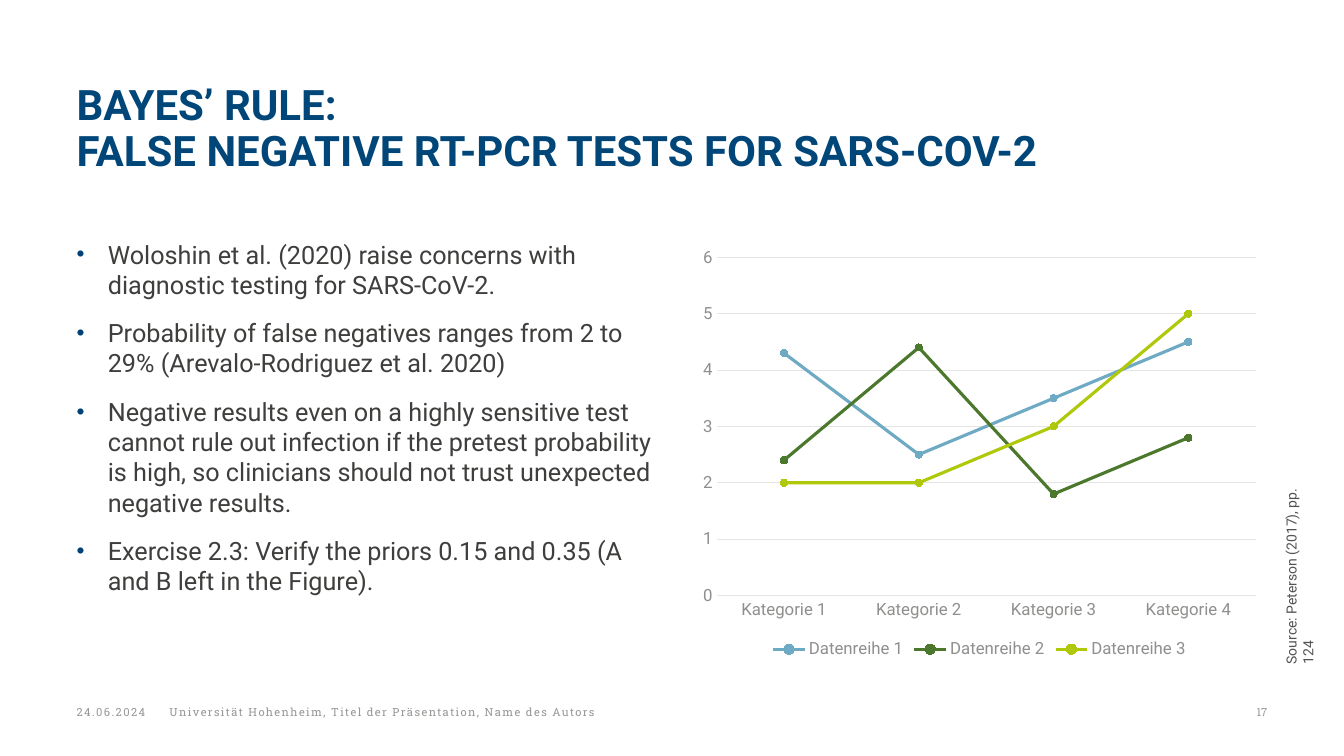
from lxml import etree
from pptx import Presentation
from pptx.chart.data import CategoryChartData
from pptx.dml.color import RGBColor
from pptx.enum import chart as ch, text
from pptx.oxml import ns
from pptx.util import Inches, Pt

SANS, SLAB = "Roboto", "Roboto Slab"
NAVY, BULLET, BODY, SOURCE = "004678", "004178", "3E3E3C", "525250"
FOOTER, AXIS, GRID = "989895", "8F8F8D", "E5E5E5"

POINTS = [
    "Woloshin et al. (2020) raise concerns with diagnostic testing for SARS-CoV-2.",
    "Probability of false negatives ranges from 2 to 29% (Arevalo-Rodriguez et al. 2020)",
    "Negative results even on a highly sensitive test cannot rule out infection if the "
    "pretest probability is high, so clinicians should not trust unexpected negative results.",
    "Exercise 2.3: Verify the priors 0.15 and 0.35 (A and B left in the Figure).",
]
CATEGORIES = [f"Kategorie {i}" for i in range(1, 5)]
SERIES = [
    ("Datenreihe 1", (4.3, 2.5, 3.5, 4.5), "6EAAC3"),
    ("Datenreihe 2", (2.4, 4.4, 1.8, 2.8), "4B782D"),
    ("Datenreihe 3", (2, 2, 3, 5), "AFC80A"),
]


def rgb(value):
    return RGBColor.from_string(value)


def format_font(font, size, color, name=SANS, bold=False):
    font.size, font.name, font.bold = Pt(size), name, bold
    font.color.rgb = rgb(color)


def format_line(line, color, width):
    line.color.rgb = rgb(color)
    line.width = Pt(width)


def place(sp, left, top, width, height):
    sp.left, sp.top = Inches(left), Inches(top)
    sp.width, sp.height = Inches(width), Inches(height)


def prepare_frame(tf, anchor=text.MSO_ANCHOR.TOP):
    tf.word_wrap = True
    tf.auto_size = text.MSO_AUTO_SIZE.NONE
    tf.vertical_anchor = anchor
    tf.margin_left = tf.margin_top = tf.margin_right = tf.margin_bottom = 0


def add_run(p, content, size, color, name=SANS, bold=False, spacing=0):
    r = p.add_run()
    r.text = content
    format_font(r.font, size, color, name, bold)
    if spacing:
        r.font._element.set("spc", str(spacing * 100))


def add_label(s, content, box, size=8, color=FOOTER, name=SLAB, spacing=0,
              anchor=text.MSO_ANCHOR.MIDDLE, align=text.PP_ALIGN.LEFT):
    sp = s.shapes.add_textbox(*map(Inches, box))
    prepare_frame(sp.text_frame, anchor)
    p = sp.text_frame.paragraphs[0]
    p.alignment = align
    add_run(p, content, size, color, name, spacing=spacing)
    return sp


def add_bullet(p):
    pPr = p._p.get_or_add_pPr()
    pPr.set("marL", str(Inches(0.31)))
    pPr.set("indent", str(-Inches(0.31)))
    color = etree.SubElement(pPr, ns.qn("a:buClr"))
    etree.SubElement(color, ns.qn("a:srgbClr"), val=BULLET)
    etree.SubElement(pPr, ns.qn("a:buSzPct"), val="90000")
    etree.SubElement(pPr, ns.qn("a:buFont"), typeface="Arial")
    etree.SubElement(pPr, ns.qn("a:buChar"), char="•")


def fill_title(sp, lines):
    place(sp, 0.76, 0.84, 11.81, 1.14)
    prepare_frame(sp.text_frame)
    p = sp.text_frame.paragraphs[0]
    p.alignment = text.PP_ALIGN.LEFT
    p.line_spacing = 0.9
    for i, line in enumerate(lines):
        if i:
            p.add_line_break()
        add_run(p, line, 30, NAVY, bold=True)


def fill_list(sp, points):
    place(sp, 0.76, 2.37, 5.71, 4.21)
    tf = sp.text_frame
    prepare_frame(tf)
    for i, point in enumerate(points):
        p = tf.add_paragraph() if i else tf.paragraphs[0]
        add_bullet(p)
        p.space_before = Pt(8 if i else 0)
        p.space_after = Pt(5)
        add_run(p, point, 18, BODY)


def format_axis(axis):
    axis.major_tick_mark = axis.minor_tick_mark = ch.XL_TICK_MARK.NONE
    format_font(axis.tick_labels.font, 12, AXIS)


def add_line_chart(s):
    data = CategoryChartData()
    data.categories = CATEGORIES
    for name, values, _ in SERIES:
        data.add_series(name, values)
    box = map(Inches, (6.86, 2.37, 5.71, 4.21))
    chart = s.shapes.add_chart(ch.XL_CHART_TYPE.LINE_MARKERS, *box, data).chart
    format_font(chart.font, 10, SOURCE)
    chart.has_title = False
    chart.has_legend = True
    chart.legend.position = ch.XL_LEGEND_POSITION.BOTTOM
    chart.legend.include_in_layout = False
    format_font(chart.legend.font, 12, AXIS)

    format_axis(chart.category_axis)
    format_line(chart.category_axis.format.line, GRID, 0.75)
    axis = chart.value_axis
    format_axis(axis)
    axis.minimum_scale, axis.maximum_scale, axis.major_unit = 0, 6, 1
    axis.format.line.fill.background()
    format_line(axis.major_gridlines.format.line, GRID, 0.75)

    plot = chart.plots[0]
    plot.vary_by_categories = False
    for series, (_, _, color) in zip(plot.series, SERIES):
        series.smooth = False
        format_line(series.format.line, color, 2.25)
        marker = series.marker
        marker.style, marker.size = ch.XL_MARKER_STYLE.CIRCLE, 5
        marker.format.fill.solid()
        marker.format.fill.fore_color.rgb = rgb(color)
        format_line(marker.format.line, color, 0.75)


def main():
    prs = Presentation()
    prs.slide_width, prs.slide_height = Inches(13.33), Inches(7.5)
    s = prs.slides.add_slide(prs.slide_layouts[1])
    fill_title(s.shapes.title, ["BAYES’ RULE:", "FALSE NEGATIVE RT-PCR TESTS FOR SARS-COV-2"])
    add_line_chart(s)
    fill_list(s.placeholders[1], POINTS)
    source = add_label(s, "Source: Peterson (2017), pp. 124", (11.81, 5.51, 1.99, 0.17),
                       size=10, color=SOURCE, name=SANS, anchor=text.MSO_ANCHOR.TOP)
    source.rotation = 270
    source.text_frame.margin_right = Inches(0.1)
    add_label(s, "24.06.2024", (0.76, 6.76, 0.78, 0.6), spacing=1)
    add_label(s, "Universität Hohenheim, Titel der Präsentation, Name des Autors",
              (1.68, 6.76, 9.84, 0.6), spacing=1)
    add_label(s, "17", (11.66, 6.76, 0.91, 0.6), align=text.PP_ALIGN.RIGHT)
    prs.save("out.pptx")


if __name__ == "__main__":
    main()
